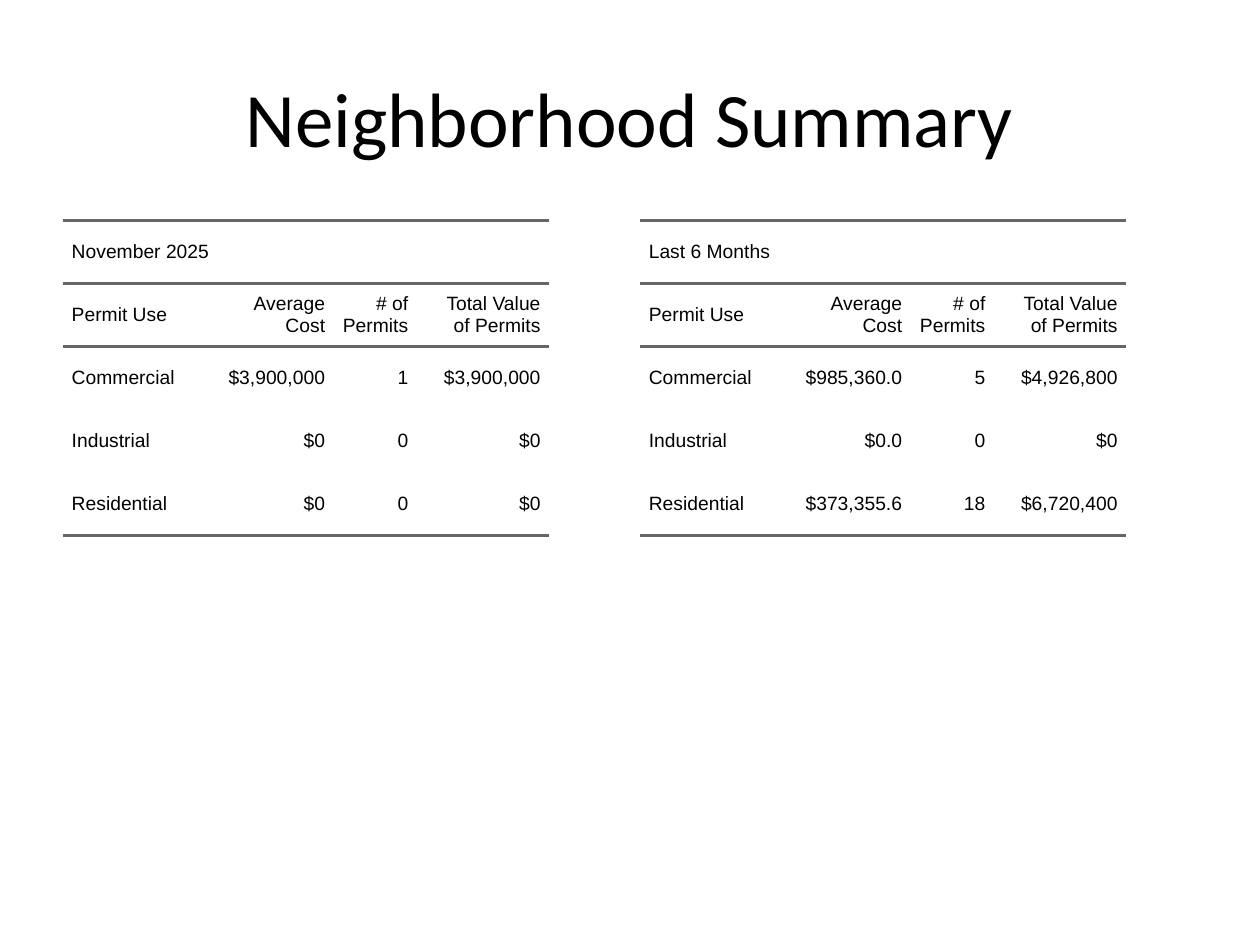
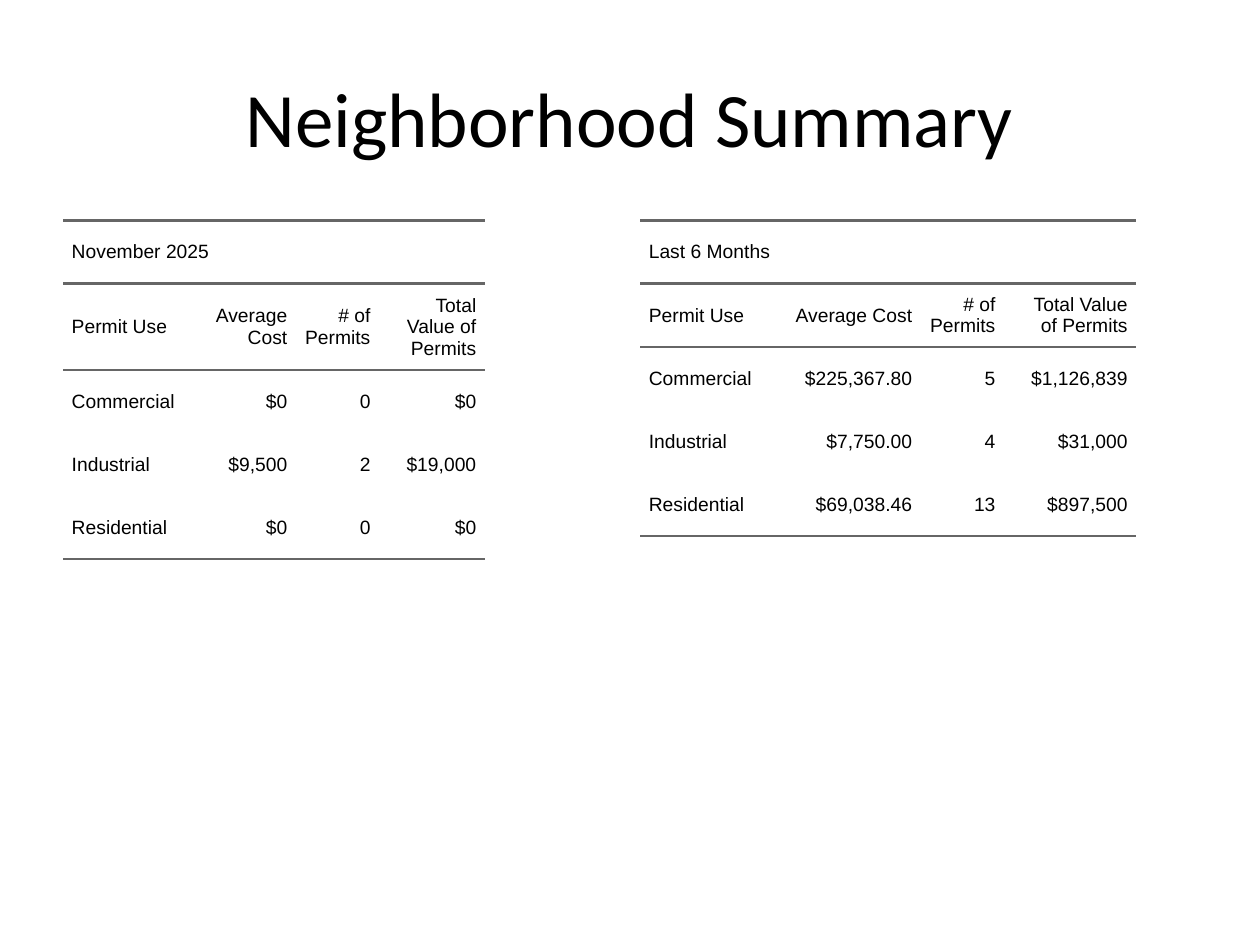
from lxml.etree import SubElement as Sub
from pptx import Presentation
from pptx.dml.color import RGBColor as Rgb
from pptx.enum.text import MSO_ANCHOR as Anchor, PP_ALIGN as Align
from pptx.oxml.ns import qn
from pptx.util import Inches, Pt

PLAIN = "{2D5ABB26-0587-4C30-8999-92F81FD0307C}"
HEADS = ["Permit Use", "Average Cost", "# of Permits", "Total Value of Permits"]
USES = ["Commercial", "Industrial", "Residential"]
LEFT, RIGHT = 1, 10.16
WIDE = [2.2, 2.1, 1.32, 2.1]

PAGES = [
    [
        ("November 2025", LEFT, WIDE,
         [("$3,900,000", "1", "$3,900,000"), ("$0", "0", "$0"), ("$0", "0", "$0")]),
        ("Last 6 Months", RIGHT, WIDE,
         [("$985,360.0", "5", "$4,926,800"), ("$0.0", "0", "$0"),
          ("$373,355.6", "18", "$6,720,400")]),
    ],
    [
        ("November 2025", LEFT, [2.2, 1.5, 1.32, 1.68],
         [("$0", "0", "$0"), ("$9,500", "2", "$19,000"), ("$0", "0", "$0")]),
        ("Last 6 Months", RIGHT, [2.2, 2.26, 1.32, 2.1],
         [("$225,367.80", "5", "$1,126,839"), ("$7,750.00", "4", "$31,000"),
          ("$69,038.46", "13", "$897,500")]),
    ],
]


def tint(code):
    return Rgb.from_string(code)


class Deck:
    cols, rows = 20, 15
    ink, rule = "000000", "666666"
    pad = Pt(5)

    def __init__(self):
        self.file = Presentation()
        self.file.slide_width = Inches(10)
        self.file.slide_height = Inches(7.5)

    def x(self, n):
        return round(self.file.slide_width * n / self.cols)

    def y(self, n):
        return round(self.file.slide_height * n / self.rows)

    def page(self):
        self.slide = self.file.slides.add_slide(self.file.slide_layouts[6])

    def style(self, para, face, size, align):
        para.alignment = align
        para.font.name = face
        para.font.size = Pt(size)
        para.font.color.rgb = tint(self.ink)

    def title(self, text):
        box = self.slide.shapes.add_textbox(self.x(1), self.y(0.6), self.x(18), self.y(2.5))
        frame = box.text_frame
        frame.word_wrap = True
        frame.vertical_anchor = Anchor.MIDDLE
        frame.text = text
        self.style(frame.paragraphs[0], "Calibri", 44, Align.CENTER)

    def edge(self, cell, side):
        line = Sub(cell._tc.get_or_add_tcPr(), qn("a:ln" + side), w=str(Pt(1.5)))
        fill = Sub(line, qn("a:solidFill"))
        Sub(fill, qn("a:srgbClr"), val=self.rule)

    def cell(self, cell, text, align, sides):
        cell.text = text
        cell.vertical_anchor = Anchor.MIDDLE
        cell.margin_left = cell.margin_right = 0
        cell.margin_top = cell.margin_bottom = self.pad
        para = cell.text_frame.paragraphs[0]
        self.style(para, "Arial", 11, align)
        para.space_before = para.space_after = self.pad
        props = para._p.get_or_add_pPr()
        for side in ("marL", "marR"):
            props.set(side, str(self.pad))
        for side in sides:
            self.edge(cell, side)
        cell.fill.background()

    def table(self, name, left, widths, data):
        grid = [[name, "", "", ""], HEADS]
        grid += [[use, *vals] for use, vals in zip(USES, data)]
        last = len(grid) - 1
        frame = self.slide.shapes.add_table(
            len(grid), len(widths), self.x(left), self.y(3.5),
            self.x(sum(widths)), self.y(len(grid)))
        table = frame.table
        table.first_row = table.horz_banding = False
        table._tbl.tblPr.find(qn("a:tableStyleId")).text = PLAIN
        for col, width in zip(table.columns, widths):
            col.width = self.x(width)
        for r, row in enumerate(grid):
            table.rows[r].height = self.y(1)
            sides = "TB" if r < 2 else "B" if r == last else ""
            for c, text in enumerate(row):
                align = Align.RIGHT if c and r else Align.LEFT
                self.cell(table.cell(r, c), text, align, sides)
        table.cell(0, 0).merge(table.cell(0, len(widths) - 1))


def main():
    deck = Deck()
    for page in PAGES:
        deck.page()
        for part in page:
            deck.table(*part)
        deck.title("Neighborhood Summary")
    deck.file.save("out.pptx")


if __name__ == "__main__":
    main()
